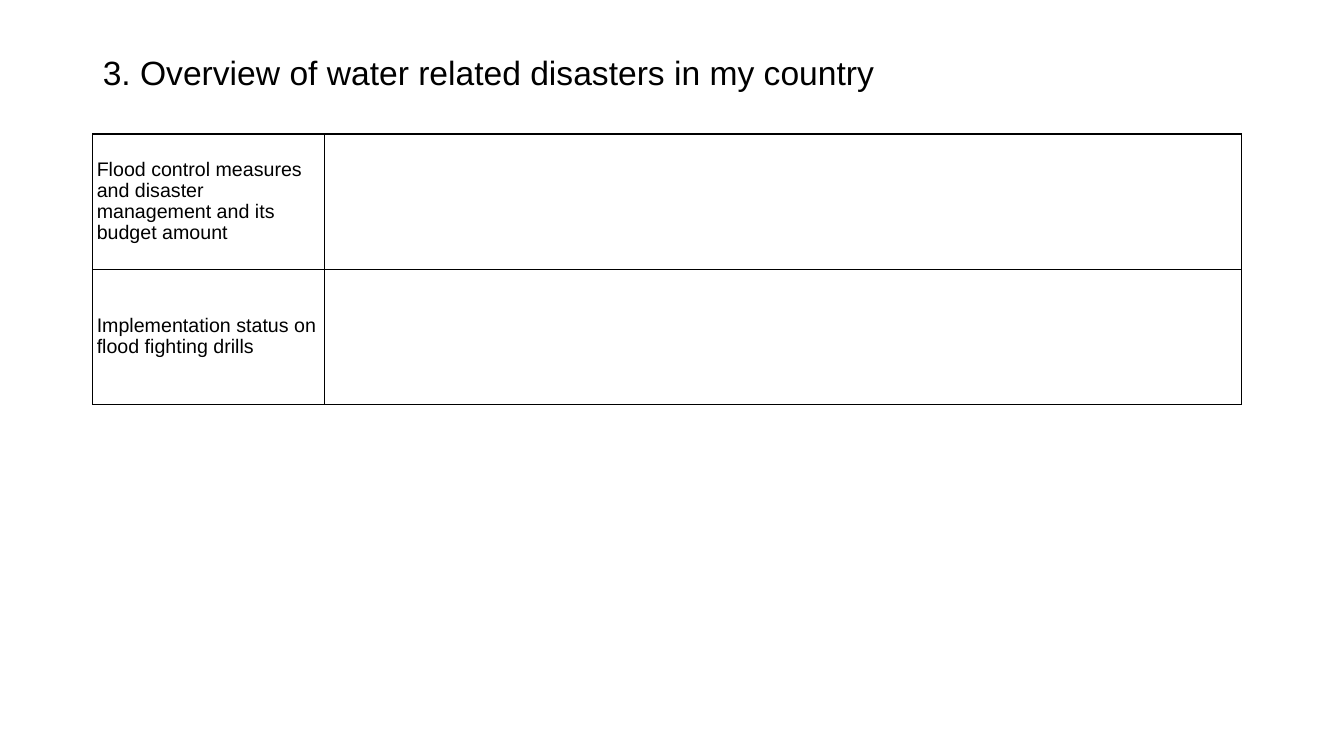
from dataclasses import dataclass
from lxml import etree
from pptx import Presentation
from pptx.dml.color import RGBColor
from pptx.enum.text import MSO_ANCHOR, PP_ALIGN
from pptx.oxml.ns import qn
from pptx.util import Pt

MIDDLE = MSO_ANCHOR.MIDDLE
LEFT = PP_ALIGN.LEFT

TITLE = "3. Overview of water related disasters in my country"
ROWS = [
    ("Flood control measures and disaster management and its budget amount", ""),
    ("Implementation status on flood fighting drills", ""),
]


@dataclass(frozen=True)
class Theme:
    font: str = "Arial"
    ink: str = "000000"
    paper: str = "FFFFFF"
    title: int = 24
    body: int = 14
    lead: int = 15
    rule: int = 1


THEME = Theme()
EDGE = 66.24
TITLE_BOX = (EDGE, 28.8, 828, 49.68)
TABLE_TOP = 95.76
WIDTHS = (165.6, 655.2)
ROW_HIGH = 96.48
INSET = 2.88


def style(para, size, lead):
    para.alignment = LEFT
    para.line_spacing = lead
    para.space_before = Pt(0)
    for run in para.runs:
        run.font.name = THEME.font
        run.font.size = Pt(size)
        run.font.color.rgb = RGBColor.from_string(THEME.ink)


def border(cell):
    props = cell._tc.get_or_add_tcPr()
    for place, side in enumerate(("lnL", "lnR", "lnT", "lnB")):
        line = etree.Element(qn(f"a:{side}"), w=str(Pt(THEME.rule)))
        fill = etree.SubElement(line, qn("a:solidFill"))
        etree.SubElement(fill, qn("a:srgbClr"), val=THEME.ink)
        props.insert(place, line)


def add_title(slide):
    title = slide.shapes.title
    title.left, title.top, title.width, title.height = map(Pt, TITLE_BOX)
    frame = title.text_frame
    frame.text = TITLE
    frame.word_wrap = True
    frame.vertical_anchor = MIDDLE
    style(frame.paragraphs[0], THEME.title, 0.9)


def add_grid(slide):
    size = (sum(WIDTHS), ROW_HIGH * len(ROWS))
    box = map(Pt, (EDGE, TABLE_TOP, *size))
    table = slide.shapes.add_table(len(ROWS), len(WIDTHS), *box).table
    table.first_row = False
    table.horz_banding = False
    for column, width in zip(table.columns, WIDTHS):
        column.width = Pt(width)
    for row, texts in zip(table.rows, ROWS):
        row.height = Pt(ROW_HIGH)
        for cell, text in zip(row.cells, texts):
            cell.text = text
            cell.vertical_anchor = MIDDLE
            cell.margin_left = cell.margin_right = Pt(INSET)
            cell.margin_top = cell.margin_bottom = Pt(0)
            cell.fill.solid()
            cell.fill.fore_color.rgb = RGBColor.from_string(THEME.paper)
            style(cell.text_frame.paragraphs[0], THEME.body, Pt(THEME.lead))
            border(cell)


def main():
    deck = Presentation()
    deck.slide_width, deck.slide_height = Pt(960), Pt(540)
    slide = deck.slides.add_slide(deck.slide_layouts[5])
    add_title(slide)
    add_grid(slide)
    deck.save("out.pptx")


if __name__ == "__main__":
    main()
